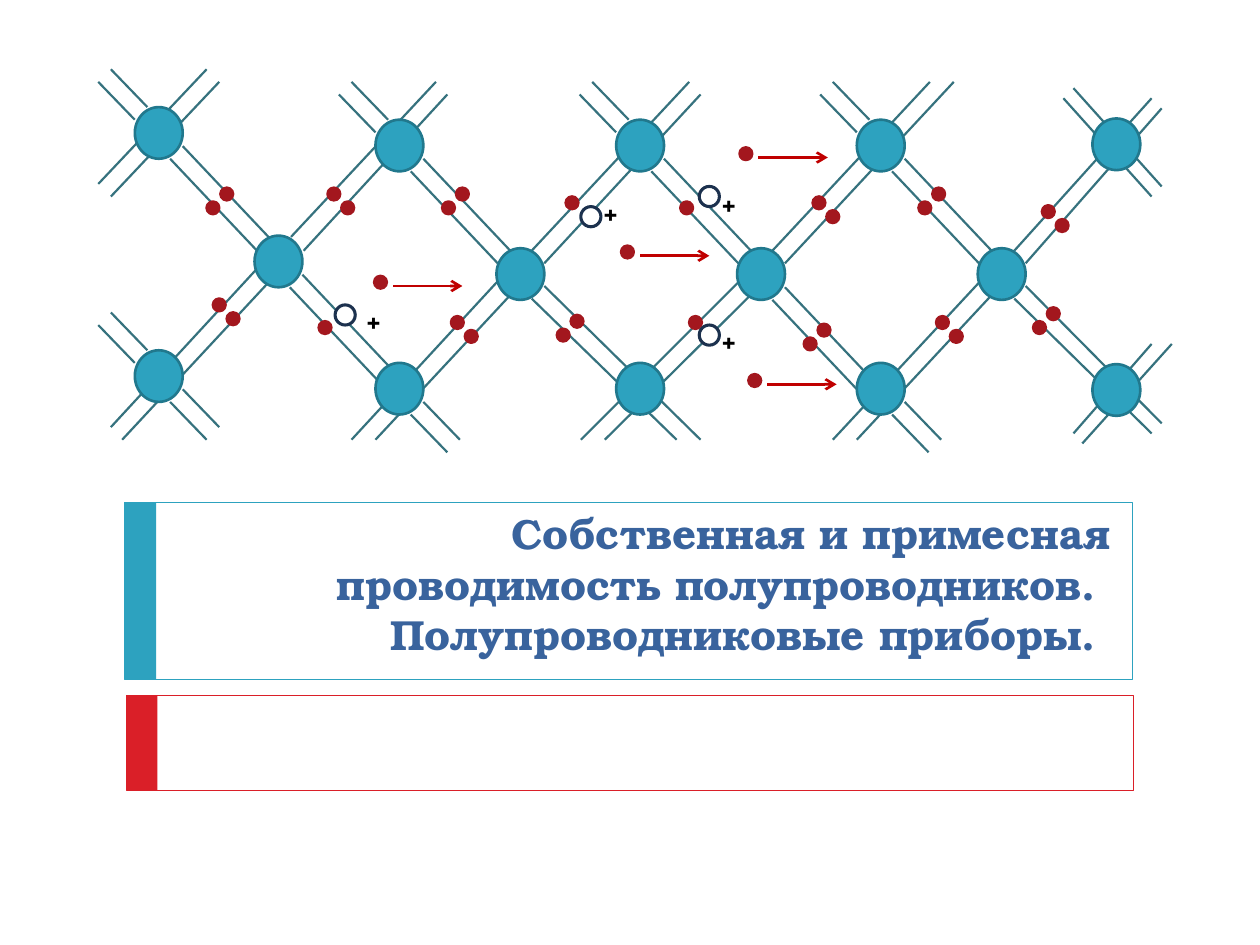
from dataclasses import dataclass
from typing import Any

from pptx import Presentation
from pptx import util as u
from pptx.dml.color import RGBColor
from pptx.enum import shapes, text
from pptx.oxml import ns
from lxml import etree

PX = 9144  # EMU in one px, 100 px to the inch


@dataclass(frozen=True)
class Theme:
    teal: str = "2DA2BF"
    rim: str = "21788D"
    bond: str = "105766"
    red: str = "DA1F28"
    dot: str = "A3171E"
    arrow: str = "C00000"
    hole: str = "1C314E"
    title: str = "39639D"
    white: str = "FFFFFF"
    black: str = "000000"
    serif: str = "TeX Gyre Bonum"
    sans: str = "Cabin"
    head: int = 24
    sign: int = 18
    opaque: int = 83


@dataclass
class Pen:
    slide: Any
    look: Theme

    def shape(self, kind, box, fill=None, line=None, width=1.5):
        item = self.slide.shapes.add_shape(kind, *(v * PX for v in box))
        item.shadow.inherit = False
        if fill:
            item.fill.solid()
            item.fill.fore_color.rgb = RGBColor.from_string(fill)
        else:
            item.fill.background()
        if line:
            item.line.color.rgb = RGBColor.from_string(line)
            item.line.width = u.Pt(width)
        else:
            item.line.fill.background()

    def rect(self, box, fill=None, line=None):
        self.shape(shapes.MSO_SHAPE.RECTANGLE, box, fill, line, 0.5)

    def disc(self, x, y, wide, high, fill, line, width=1.5):
        self.shape(shapes.MSO_SHAPE.OVAL, (x, y, wide, high), fill, line, width)

    def line(self, ends, color, width):
        item = self.slide.shapes.add_connector(
            shapes.MSO_CONNECTOR.STRAIGHT, *(v * PX for v in ends))
        item.line.color.rgb = RGBColor.from_string(color)
        item.line.width = u.Pt(width)
        props = item.line._get_or_add_ln()
        etree.SubElement(props.getparent(), ns.qn("a:effectLst"))
        return props

    def bond(self, *ends):
        props = self.line(ends, self.look.bond, 1.25)
        tint = props.find(".//" + ns.qn("a:srgbClr"))
        etree.SubElement(tint, ns.qn("a:alpha"), val=str(self.look.opaque * 1000))

    def arrow(self, x, y, size):
        props = self.line((x, y, x + size, y), self.look.arrow, 1.5)
        etree.SubElement(props, ns.qn("a:tailEnd"), type="arrow")

    def atom(self, x, y):
        self.disc(x, y, 38, 41, self.look.teal, self.look.rim)

    def dot(self, x, y):
        self.disc(x, y, 10, 10, self.look.dot, self.look.dot)

    def hole(self, x, y):
        self.disc(x, y, 16, 16, self.look.white, self.look.hole, 1.75)

    def label(self, box, words, face, size, color, align, wrap):
        frame = self.slide.shapes.add_textbox(*(v * PX for v in box)).text_frame
        frame.text = words
        frame.word_wrap = wrap
        frame.vertical_anchor = text.MSO_ANCHOR.TOP
        for para in frame.paragraphs:
            para.alignment = align
            for run in para.runs:
                run.font.name = face
                run.font.size = u.Pt(size)
                run.font.bold = True
                run.font.color.rgb = RGBColor.from_string(color)


# Atoms of the lattice, by left top corner
TOPS = [(107, 85), (298, 95), (489, 95), (680, 95)]
HUBS = [(202, 187), (394, 197), (585, 197), (776, 197)]
LOWS = [(107, 278), (298, 288), (489, 288), (680, 288)]
EDGES = [(867, 94), (867, 289)]

# Long bonds that run past the lattice
LONG = [
    (97, 349, 217, 220), (88, 339, 207, 210),
    (241, 199, 355, 75), (231, 188, 346, 65),
    (298, 349, 408, 231), (279, 349, 398, 220),
    (432, 209, 556, 75), (422, 199, 547, 65),
    (422, 237, 537, 349), (432, 227, 556, 349),
    (480, 349, 599, 231), (461, 349, 590, 220),
    (623, 209, 757, 65), (613, 199, 738, 65),
    (680, 349, 790, 231), (661, 349, 781, 220),
    (814, 209, 922, 86), (805, 199, 914, 78),
    (805, 237, 914, 344), (814, 227, 922, 336),
    (88, 156, 174, 65), (78, 146, 164, 55),
    (859, 352, 930, 273), (852, 344, 914, 273),
    (914, 156, 844, 78), (922, 148, 852, 70),
]

# Electrons: pairs that fall or rise to the right, lone ones and freed ones
FALL = [(358, 251), (260, 149), (645, 156), (169, 237), (743, 251), (827, 163)]
RISE = [(351, 160), (442, 261), (638, 268), (164, 160), (820, 255), (729, 160)]
LONE = [(449, 156), (547, 251), (540, 160), (253, 255)]
FREE = [(297, 219), (493, 195), (587, 117), (594, 297)]

# Holes, each with the place of its plus sign
HOLES = [((266, 242), (281, 234)), ((461, 164), (469, 148)),
         ((555, 148), (563, 141)), ((555, 258), (563, 250))]

TITLE = ("Собственная и примесная проводимость полупроводников. \v"
         "Полупроводниковые приборы. ")


def frames(pen):
    look = pen.look
    for x, y, high, color in ((99, 399, 140, look.teal), (100, 552, 75, look.red)):
        pen.rect((x, y, 800, high), line=color)
        pen.rect((x, y, 25, high), fill=color)
    pen.label((133, 398, 758, 148), TITLE, look.serif, look.head, look.title,
              text.PP_ALIGN.RIGHT, True)


def lattice(pen):
    # Stubs up and to the left
    for x, y in TOPS + LOWS[:1]:
        for dx, dy in ((0, 10), (10, 0)):
            pen.bond(x + dx, y + dy, x + dx - 29, y + dy - 30)
    # Bonds down and to the right, short below the lattice
    full = [(*spot, 69, 73) for spot in TOPS + HUBS[::2]]
    short = [(*LOWS[i], 29, 30) for i in (0, 1, 3)]
    for x, y, wide, high in full + short:
        for dx, dy in ((28, 41), (38, 31)):
            pen.bond(x + dx, y + dy, x + dx + wide, y + dy + high)
    for ends in LONG:
        pen.bond(*ends)
    for spot in TOPS + HUBS + LOWS + EDGES:
        pen.atom(*spot)


def charges(pen):
    look = pen.look
    for spots, step in ((FALL, 11), (RISE, -11)):
        for x, y in spots:
            pen.dot(x, y)
            pen.dot(x + 11, y + step)
    for spot in LONE + FREE:
        pen.dot(*spot)
    for x, y in FREE:
        pen.arrow(x + 15, y + 8, 55)
    for spot, sign in HOLES:
        pen.hole(*spot)
        pen.label((*sign, 33, 40), "+", look.sans, look.sign, look.black,
                  text.PP_ALIGN.LEFT, False)


def main():
    deck = Presentation()
    deck.slide_width, deck.slide_height = 1000 * PX, 750 * PX
    pen = Pen(deck.slides.add_slide(deck.slide_layouts[6]), Theme())
    frames(pen)
    lattice(pen)
    charges(pen)
    deck.save("out.pptx")


if __name__ == "__main__":
    main()
